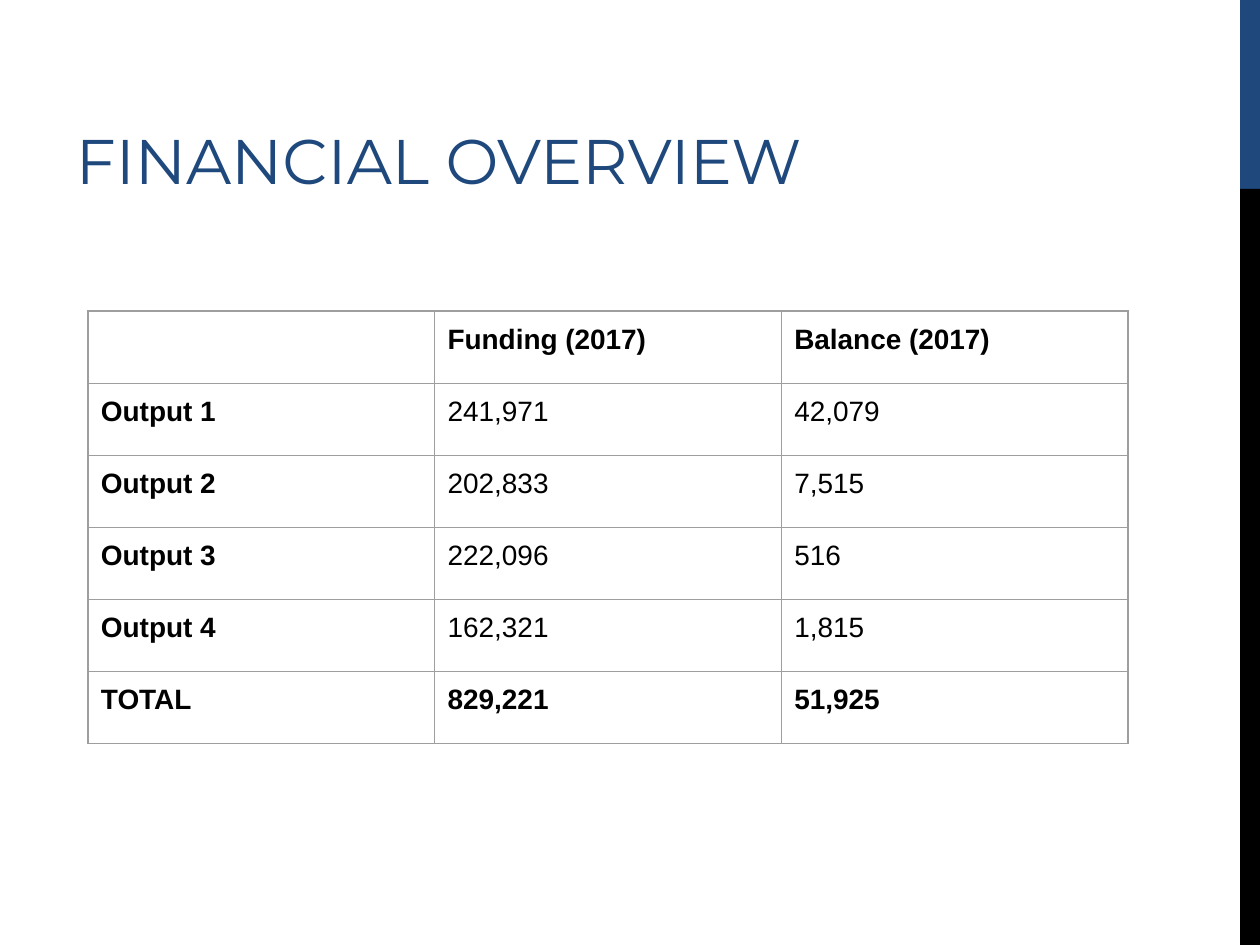
from lxml import etree
from pptx import Presentation
from pptx.dml.color import RGBColor
from pptx.enum.shapes import MSO_SHAPE
from pptx.enum.text import MSO_ANCHOR
from pptx.oxml.ns import qn
from pptx.util import Inches, Pt

RECTANGLE = MSO_SHAPE.RECTANGLE
TOP, BOTTOM = MSO_ANCHOR.TOP, MSO_ANCHOR.BOTTOM

PX_PER_INCH = 126
NAVY, BLACK, WHITE, GREY = "1F497D", "000000", "FFFFFF", "9E9E9E"
INSET = 13

FINANCES = [
    ("", "Funding (2017)", "Balance (2017)"),
    ("Output 1", "241,971", "42,079"),
    ("Output 2", "202,833", "7,515"),
    ("Output 3", "222,096", "516"),
    ("Output 4", "162,321", "1,815"),
    ("TOTAL", "829,221", "51,925"),
]


def px(length):
    return Inches(length / PX_PER_INCH)


def color(hex_string):
    return RGBColor.from_string(hex_string)


def set_font(para, name, size, hex_string, bold=False):
    para.font.name = name
    para.font.size = Pt(size)
    para.font.bold = bold
    para.font.color.rgb = color(hex_string)


def set_insets(target):
    target.margin_left = target.margin_right = px(INSET)
    target.margin_top = target.margin_bottom = px(INSET)


def add_side_bar(page, left, top, width, height):
    """Vertical bar: the top fifth is navy, the rest is black."""
    split = height // 5
    for offset, length, fill in ((0, split, NAVY), (split, height - split, BLACK)):
        bar = page.shapes.add_shape(
            RECTANGLE, px(left), px(top + offset), px(width), px(length))
        bar.shadow.inherit = False
        bar.fill.solid()
        bar.fill.fore_color.rgb = color(fill)
        bar.line.fill.background()


def add_title(page, left, top, width, height, text):
    box = page.shapes.add_textbox(px(left), px(top), px(width), px(height))
    frame = box.text_frame
    frame.word_wrap = True
    frame.vertical_anchor = BOTTOM
    set_insets(frame)
    para = frame.paragraphs[0]
    para.text = text
    set_font(para, "Montserrat", 36, NAVY)


def add_borders(cell):
    properties = cell._tc.get_or_add_tcPr()
    for position, side in enumerate(("lnL", "lnR", "lnT", "lnB")):
        line = etree.Element(qn(f"a:{side}"), w=str(Pt(0.75)))
        fill = etree.SubElement(line, qn("a:solidFill"))
        etree.SubElement(fill, qn("a:srgbClr"), val=GREY)
        properties.insert(position, line)


def add_finance_table(page, left, top, width, height, rows):
    row_count, column_count = len(rows), len(rows[0])
    table = page.shapes.add_table(
        row_count, column_count, px(left), px(top), px(width), px(height)).table
    table.first_row = table.horz_banding = False
    for column in table.columns:
        column.width = px(width / column_count)
    for row in table.rows:
        row.height = px(height / row_count)

    # Headings, row labels and the total row are bold
    for r, values in enumerate(rows):
        for c, value in enumerate(values):
            cell = table.cell(r, c)
            cell.fill.solid()
            cell.fill.fore_color.rgb = color(WHITE)
            cell.vertical_anchor = TOP
            set_insets(cell)
            para = cell.text_frame.paragraphs[0]
            para.text = value
            set_font(para, "Arial", 16, BLACK, bold=r in (0, row_count - 1) or c == 0)
            add_borders(cell)


def main():
    deck = Presentation()
    deck.slide_width, deck.slide_height = px(1260), px(945)
    page = deck.slides.add_slide(deck.slide_layouts[6])
    add_side_bar(page, 1240, 0, 20, 945)
    add_title(page, 63, 21, 798, 189, "FINANCIAL OVERVIEW")
    add_finance_table(page, 88, 311, 1040, 433, FINANCES)
    deck.save("out.pptx")


if __name__ == "__main__":
    main()
